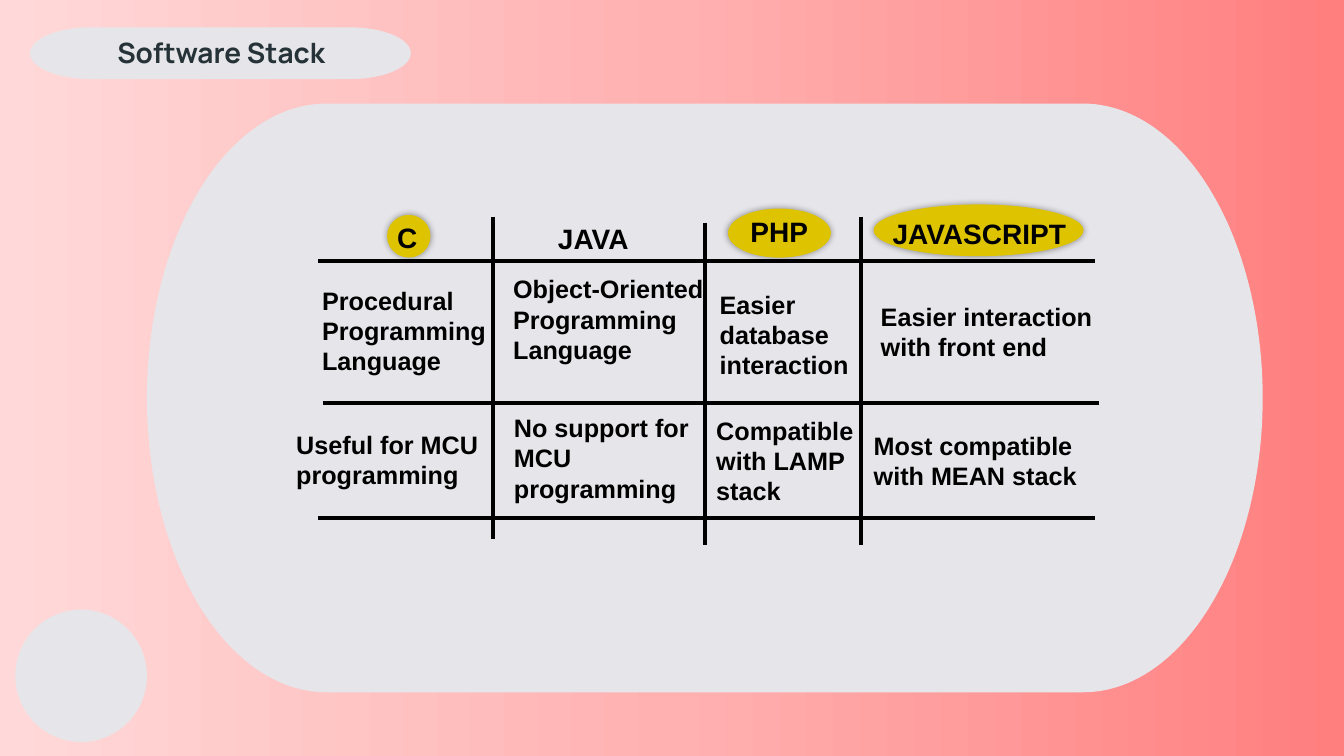
from copy import deepcopy

from lxml.etree import SubElement as Sub
from pptx import Presentation
from pptx.dml.color import RGBColor as Rgb
from pptx.enum.shapes import MSO_CONNECTOR as Link, MSO_SHAPE as Kind
from pptx.enum.text import MSO_ANCHOR as Anchor, MSO_AUTO_SIZE as Auto, PP_ALIGN as Align
from pptx.oxml.ns import qn
from pptx.util import Pt

HUES = {"ink": "000000", "title": "253237", "panel": "E6E6EA", "mark": "DEC400",
        "deep": "FF7E7E", "mid": "FFB1B1", "pale": "FFD9D9"}
HEAD = {"name": "Arial", "size": Pt(20), "bold": True}
BODY = {**HEAD, "size": Pt(18)}
TITLE = {**HEAD, "name": "Manrope"}
FRAME = {"word_wrap": True, "auto_size": Auto.NONE, "vertical_anchor": Anchor.TOP}

# Each column: heading, then its two cells, as text and box
COLS = [
    [("C", (276.5, 154, 37.5, 32)),
     ("Procedural Programming Language", (223, 200, 143, 73)),
     ("Useful for MCU programming", (204.5, 303, 159, 51))],
    [("JAVA", (391.5, 155, 78, 32)),
     ("Object-Oriented Programming Language", (359.5, 192, 152, 94)),
     ("No support for MCU programming", (360, 291, 151, 73))],
    [("PHP", (529, 150, 78, 32)),
     ("Easier database interaction", (507, 203, 122, 73)),
     ("Compatible with LAMP stack", (504.5, 293, 118, 73))],
    [("JAVASCRIPT", (630.5, 151, 150, 32)),
     ("Easier interaction with front end", (622, 211.5, 173, 51)),
     ("Most compatible with MEAN stack", (617, 304, 173, 51))],
]
MARKS = [(276.5, 153.5, 31, 30.5), (520, 149, 73.5, 35), (624, 146, 150, 37)]
ROWS = [(227.5, 186.5), (230.5, 288), (227.5, 370)]
RULES = [(352, 155, 385), (503.5, 159, 389), (615, 155, 389)]


def hue(key):
    return Rgb.from_string(HUES[key])


def put(item, vals):
    for key, val in vals.items():
        setattr(item, key, val)


def paint(slide):
    """Fill the background with a gradient of three stops."""
    fill = slide.background.fill
    fill.gradient()
    fill.gradient_angle = 180
    stops = slide.element.find(".//" + qn("a:gsLst"))
    stops.insert(1, deepcopy(stops[0]))
    for stop, key, pos in zip(fill.gradient_stops, ("deep", "mid", "pale"), (0, 0.5, 1)):
        stop.color.rgb = hue(key)
        stop.position = pos


def shape(slide, kind, box, key):
    item = slide.shapes.add_shape(kind, *map(Pt, box))
    item.shadow.inherit = False
    item.fill.solid()
    item.fill.fore_color.rgb = hue(key)
    item.line.fill.background()
    return item


def mark(slide, box):
    """Draw a yellow oval with a soft shadow around it."""
    item = shape(slide, Kind.OVAL, box, "mark")
    glow = Sub(item.element.spPr.find(qn("a:effectLst")), qn("a:outerShdw"),
               blurRad=str(Pt(5)), dist="0", dir="0", algn="ctr", rotWithShape="0")
    tone = Sub(glow, qn("a:srgbClr"), val=HUES["ink"])
    Sub(tone, qn("a:alpha"), val="40000")


def line(slide, *ends):
    item = slide.shapes.add_connector(Link.STRAIGHT, *map(Pt, ends))
    item.line.color.rgb = hue("ink")
    item.line.width = Pt(3)
    Sub(item.element.spPr, qn("a:effectLst"))


def write(item, text, font, key="ink", align=Align.LEFT):
    frame = item.text_frame
    put(frame, FRAME)
    para = frame.paragraphs[0]
    para.alignment = align
    run = para.add_run()
    run.text = text
    put(run.font, font)
    run.font.color.rgb = hue(key)


def head(slide):
    """Set the title on its pill."""
    pill = shape(slide, Kind.FLOWCHART_TERMINATOR, (21.5, 19.5, 272, 37), "panel")
    title = slide.shapes.title
    pill.element.addnext(title.element)
    put(title, dict(zip(("left", "top", "width", "height"), map(Pt, (48, 22, 220, 32)))))
    write(title, "Software Stack", TITLE, "title", Align.CENTER)


def main():
    deck = Presentation()
    put(deck, {"slide_width": Pt(960), "slide_height": Pt(540)})
    slide = deck.slides.add_slide(deck.slide_layouts[5])

    # Backdrop and title
    paint(slide)
    shape(slide, Kind.OVAL, (11, 435.5, 94, 94.5), "panel")
    head(slide)
    shape(slide, Kind.FLOWCHART_TERMINATOR, (105, 74, 797, 420.5), "panel")

    # Grid lines
    for left, top in ROWS:
        line(slide, left, top, left + 554.5, top)
    for left, top, foot in RULES:
        line(slide, left, top, left, foot)

    # Marked headings and cells
    for box in MARKS:
        mark(slide, box)
    for col in COLS:
        for (text, box), font in zip(col, (HEAD, BODY, BODY)):
            write(slide.shapes.add_textbox(*map(Pt, box)), text, font)

    deck.save("out.pptx")


if __name__ == "__main__":
    main()
